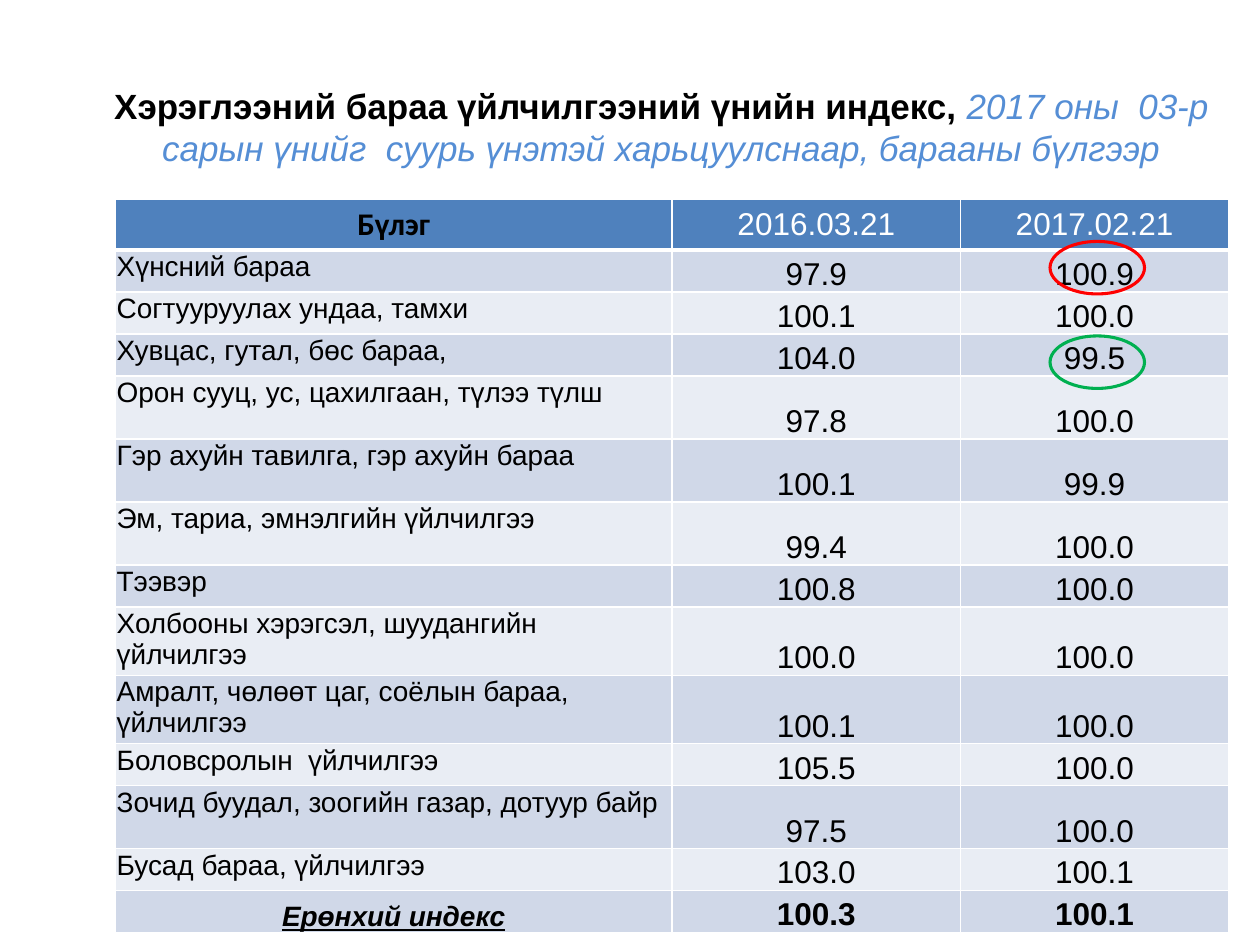
import pptx
import pptx.dml.color
import pptx.enum.shapes
import pptx.enum.text
import pptx.oxml
import pptx.oxml.ns
import pptx.util

Pt = pptx.util.Pt
ALIGN = pptx.enum.text.PP_ALIGN
ANCHOR = pptx.enum.text.MSO_ANCHOR

COLORS = {
    "black": "000000", "white": "FFFFFF", "subtitle": "558ED5",
    "header": "4F81BD", "odd": "D0D8E8", "even": "E9EDF4",
    "red": "FF0000", "green": "00B050",
}
SINGLE, DOUBLE = 24, 36
HEADER = ("Бүлэг", "2016.03.21", "2017.02.21")
GROUPS = [
    ("Хүнсний бараа", "97.9", "100.9", SINGLE),
    ("Согтууруулах ундаа, тамхи", "100.1", "100.0", SINGLE),
    ("Хувцас, гутал, бөс бараа,", "104.0", "99.5", SINGLE),
    ("Орон сууц, ус, цахилгаан, түлээ түлш", "97.8", "100.0", DOUBLE),
    ("Гэр ахуйн тавилга, гэр ахуйн бараа", "100.1", "99.9", DOUBLE),
    ("Эм, тариа, эмнэлгийн үйлчилгээ", "99.4", "100.0", DOUBLE),
    ("Тээвэр", "100.8", "100.0", SINGLE),
    ("Холбооны хэрэгсэл, шуудангийн үйлчилгээ", "100.0", "100.0", DOUBLE),
    ("Амралт, чөлөөт цаг, соёлын бараа, үйлчилгээ", "100.1", "100.0", DOUBLE),
    ("Боловсролын  үйлчилгээ", "105.5", "100.0", SINGLE),
    ("Зочид буудал, зоогийн газар, дотуур байр", "97.5", "100.0", DOUBLE),
    ("Бусад бараа, үйлчилгээ", "103.0", "100.1", SINGLE),
]
TOTAL = ("Ерөнхий индекс", "100.3", "100.1", SINGLE)


def rgb(name):
    """Return the named colour."""
    return pptx.dml.color.RGBColor.from_string(COLORS[name])


def style_run(r, size, color="black", bold=False, italic=False, font="Arial"):
    """Set the font of a run."""
    r.font.name = font
    r.font.size = Pt(size)
    r.font.bold = bold
    r.font.italic = italic
    r.font.color.rgb = rgb(color)


def add_title(s):
    """Add the two-tone heading."""
    sp = s.shapes.add_textbox(Pt(54), Pt(48), Pt(648), Pt(48))
    tf = sp.text_frame
    tf.word_wrap = True
    tf.vertical_anchor = ANCHOR.MIDDLE
    p = tf.paragraphs[0]
    p.alignment = ALIGN.CENTER
    r = p.add_run()
    r.text = "Хэрэглээний бараа үйлчилгээний үнийн индекс, "
    style_run(r, 20, bold=True)
    r = p.add_run()
    r.text = "2017 оны  03-р сарын үнийг  суурь үнэтэй харьцуулснаар, барааны бүлгээр"
    style_run(r, 20, "subtitle", italic=True)


def set_borders(cell, bottom=1, top=1):
    """Draw white lines on the four sides of a cell."""
    pr = cell._tc.get_or_add_tcPr()
    widths = {"lnL": 1, "lnR": 1, "lnT": top, "lnB": bottom}
    for i, (tag, width) in enumerate(widths.items()):
        pr.insert(i, pptx.oxml.parse_xml(
            f'<a:{tag} {pptx.oxml.ns.nsdecls("a")} w="{Pt(width)}"><a:solidFill>'
            f'<a:srgbClr val="{COLORS["white"]}"/></a:solidFill></a:{tag}>'))


def fill_cell(cell, text, fill, align=ALIGN.CENTER, anchor=ANCHOR.BOTTOM,
              margins=(0, 0, 0, 0), **font):
    """Write and format one table cell."""
    cell.fill.solid()
    cell.fill.fore_color.rgb = rgb(fill)
    cell.margin_left, cell.margin_top, cell.margin_right, cell.margin_bottom = map(Pt, margins)
    cell.vertical_anchor = anchor
    p = cell.text_frame.paragraphs[0]
    p.text = text
    p.alignment = align
    style_run(p.runs[0], **font)


def add_index_table(s):
    """Add the price index table with its header and total rows."""
    rows = GROUPS + [TOTAL]
    widths = (318, 165, 153)
    heights = [27.6] + [row[-1] for row in rows]
    table = s.shapes.add_table(len(heights), len(widths), Pt(66), Pt(114),
                               Pt(sum(widths)), Pt(sum(heights))).table
    for col, width in zip(table.columns, widths):
        col.width = Pt(width)
    for row, height in zip(table.rows, heights):
        row.height = Pt(height)

    fill_cell(table.cell(0, 0), HEADER[0], "header", anchor=ANCHOR.TOP,
              margins=(7.2, 3.6, 7.2, 3.6), size=18, bold=True, font="Calibri")
    for j in (1, 2):
        fill_cell(table.cell(0, j), HEADER[j], "header", anchor=ANCHOR.MIDDLE,
                  size=18, color="white")

    for i, (name, *values, _) in enumerate(rows, 1):
        fill = "odd" if i % 2 else "even"
        total = i == len(rows)
        fill_cell(table.cell(i, 0), name, fill,
                  align=ALIGN.CENTER if total else ALIGN.LEFT,
                  anchor=ANCHOR.BOTTOM if total else ANCHOR.TOP,
                  margins=(0.72, 0.72, 0.72, 0), size=16, bold=total, italic=total)
        for j, value in enumerate(values, 1):
            fill_cell(table.cell(i, j), value, fill, size=18, bold=total)
    table.cell(len(rows), 0).text_frame.paragraphs[0].runs[0].font.underline = True

    for i in range(len(heights)):
        for j in range(len(widths)):
            set_borders(table.cell(i, j), bottom=3 if i == 0 else 1, top=3 if i == 1 else 1)


def add_ring(s, top, color):
    """Circle a value in the last column."""
    sp = s.shapes.add_shape(pptx.enum.shapes.MSO_SHAPE.OVAL, Pt(600), Pt(top), Pt(54), Pt(30))
    sp.shadow.inherit = False
    sp.fill.background()
    sp.line.color.rgb = rgb(color)
    sp.line.width = Pt(1.75)


def main():
    """Build and save the slide."""
    prs = pptx.Presentation()
    prs.slide_width, prs.slide_height = Pt(720), Pt(540)
    s = prs.slides.add_slide(prs.slide_layouts[6])
    add_title(s)
    add_index_table(s)
    add_ring(s, 138, "red")
    add_ring(s, 192, "green")
    prs.save("out.pptx")


if __name__ == "__main__":
    main()
